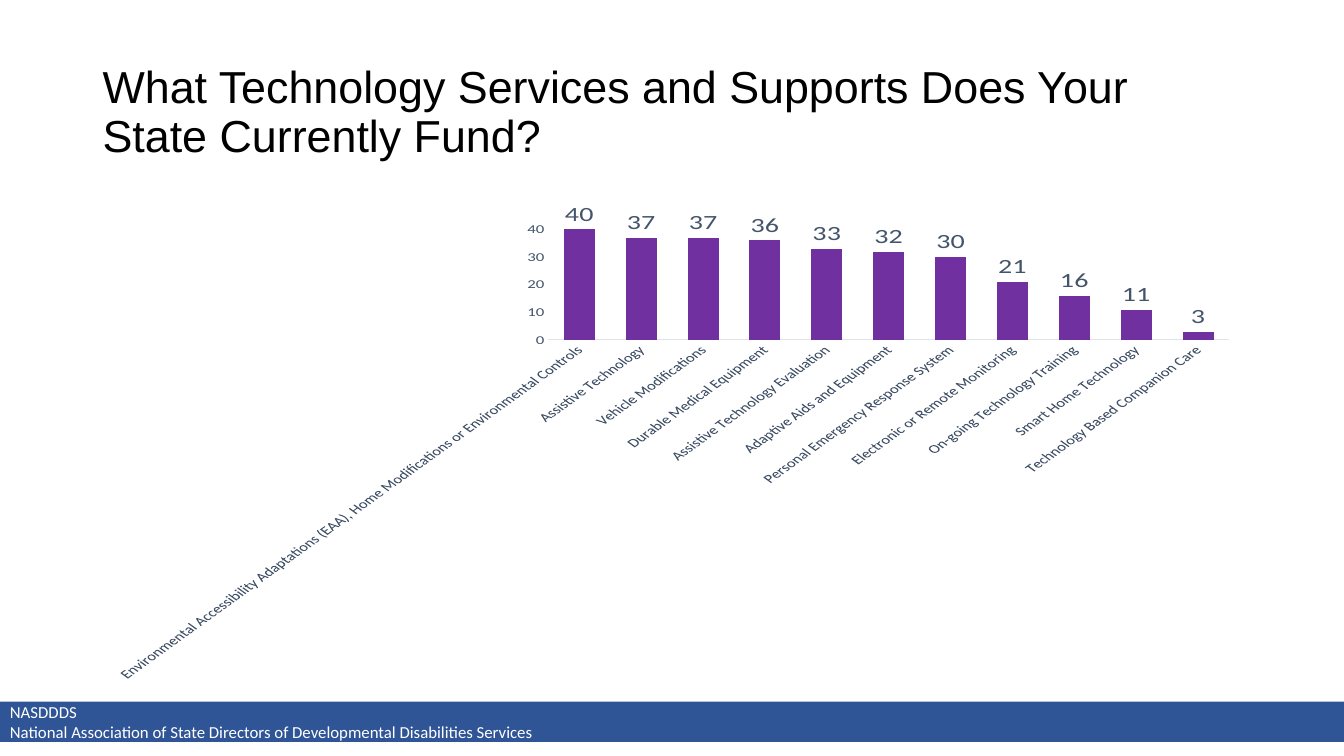
from pptx import Presentation
from pptx.chart.data import CategoryChartData
from pptx.dml.color import RGBColor
from pptx.enum.chart import XL_CHART_TYPE as ChartType, XL_LABEL_POSITION as LabelPos, XL_TICK_MARK as Tick
from pptx.enum.shapes import MSO_SHAPE as Shape
from pptx.enum.text import MSO_ANCHOR as Anchor, PP_ALIGN as Align
from pptx.util import Inches, Pt

WIDTH, HEIGHT = Inches(13.33), Inches(7.5)
COLORS = {"title": "000000", "bar": "7030A0", "label": "44546A",
          "axis": "E0E5EB", "footer": "2F5597", "footer_text": "FFFFFF"}
SERVICES = {
    "Environmental Accessibility Adaptations (EAA), Home Modifications or Environmental Controls": 40,
    "Assistive Technology": 37,
    "Vehicle Modifications": 37,
    "Durable Medical Equipment": 36,
    "Assistive Technology Evaluation": 33,
    "Adaptive Aids and Equipment": 32,
    "Personal Emergency Response System": 30,
    "Electronic or Remote Monitoring": 21,
    "On-going Technology Training": 16,
    "Smart Home Technology": 11,
    "Technology Based Companion Care": 3,
}
FOOTER_LINES = ["NASDDDS",
                "National Association of State Directors of Developmental Disabilities Services"]


def rgb(role):
    """Return the colour of a role."""
    return RGBColor.from_string(COLORS[role])


def set_all(target, **values):
    """Set every given attribute on the target."""
    for key, value in values.items():
        setattr(target, key, value)


def set_font(font, name, size, role):
    """Give a font its face, size and colour."""
    set_all(font, name=name, size=Pt(size))
    font.color.rgb = rgb(role)


def write_lines(frame, lines, font, spacing=1.0):
    """Fill a text frame with left-aligned, vertically centred paragraphs."""
    set_all(frame, word_wrap=True, vertical_anchor=Anchor.MIDDLE)
    for index, line in enumerate(lines):
        paragraph = frame.add_paragraph() if index else frame.paragraphs[0]
        set_all(paragraph, text=line, alignment=Align.LEFT, line_spacing=spacing)
        set_font(paragraph.runs[0].font, *font)


def add_title(slide, box):
    """Place the question in its box."""
    question = slide.shapes.add_textbox(*box)
    write_lines(question.text_frame,
                ["What Technology Services and Supports Does Your State Currently Fund?"],
                ("Arial", 32, "title"), 0.9)


def add_services_chart(slide, box):
    """Place the column chart of funded services in its box."""
    data = CategoryChartData()
    data.categories = list(SERVICES)
    data.add_series("Series 1", list(SERVICES.values()))
    chart = slide.shapes.add_chart(ChartType.COLUMN_CLUSTERED, *box, data).chart
    set_all(chart, has_legend=False, has_title=False)
    set_font(chart.font, "Calibri", 10, "title")

    for axis in (chart.category_axis, chart.value_axis):
        set_all(axis, major_tick_mark=Tick.NONE, minor_tick_mark=Tick.NONE,
                has_major_gridlines=False)
        set_font(axis.tick_labels.font, "Calibri", 12, "label")
    service_line = chart.category_axis.format.line
    service_line.color.rgb = rgb("axis")
    service_line.width = Pt(0.75)
    slant = chart.category_axis._element.txPr.find(
        "{http://schemas.openxmlformats.org/drawingml/2006/main}bodyPr")
    slant.set("rot", "-2700000")
    slant.set("vert", "horz")
    set_all(chart.value_axis, minimum_scale=0, maximum_scale=40, major_unit=10)
    chart.value_axis.format.line.fill.background()

    columns = chart.plots[0]
    set_all(columns, gap_width=100, overlap=-24, vary_by_categories=False)
    states = columns.series[0]
    states.format.fill.solid()
    states.format.fill.fore_color.rgb = rgb("bar")
    set_all(states.data_labels, show_value=True, position=LabelPos.OUTSIDE_END)
    set_font(states.data_labels.font, "Calibri", 20, "label")


def add_footer(slide, box):
    """Place the association's band in its box."""
    band = slide.shapes.add_shape(Shape.RECTANGLE, *box)
    band.shadow.inherit = False
    band.fill.solid()
    band.fill.fore_color.rgb = rgb("footer")
    band.line.fill.background()
    write_lines(band.text_frame, FOOTER_LINES, ("Calibri", 12, "footer_text"))


def main():
    """Build and save the slide."""
    deck = Presentation()
    set_all(deck, slide_width=WIDTH, slide_height=HEIGHT)
    slide = deck.slides.add_slide(deck.slide_layouts[6])
    margin, content_width = Inches(0.92), Inches(11.5)
    add_title(slide, (margin, Inches(0.4), content_width, Inches(1.45)))
    add_services_chart(slide, (margin, Inches(2), content_width, Inches(4.76)))
    add_footer(slide, (0, Inches(6.96), WIDTH, Inches(0.4)))
    deck.save("out.pptx")


if __name__ == "__main__":
    main()
